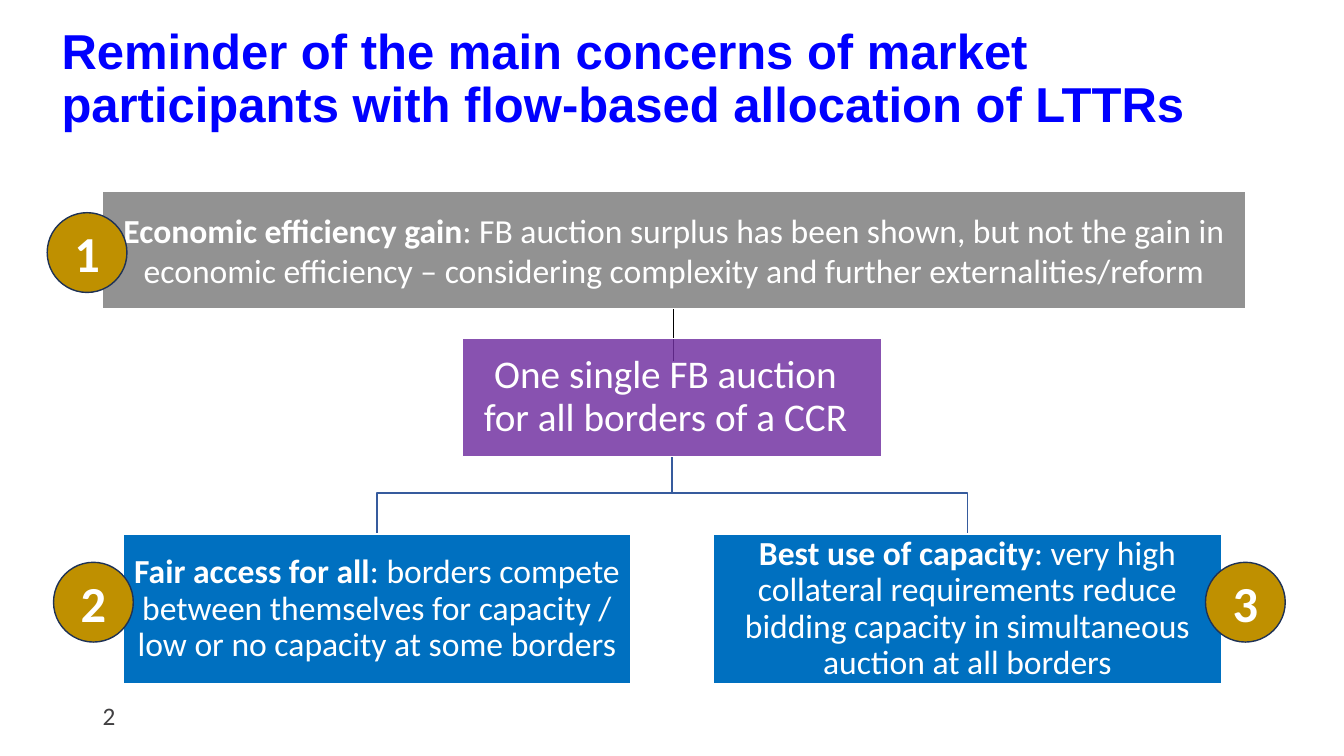
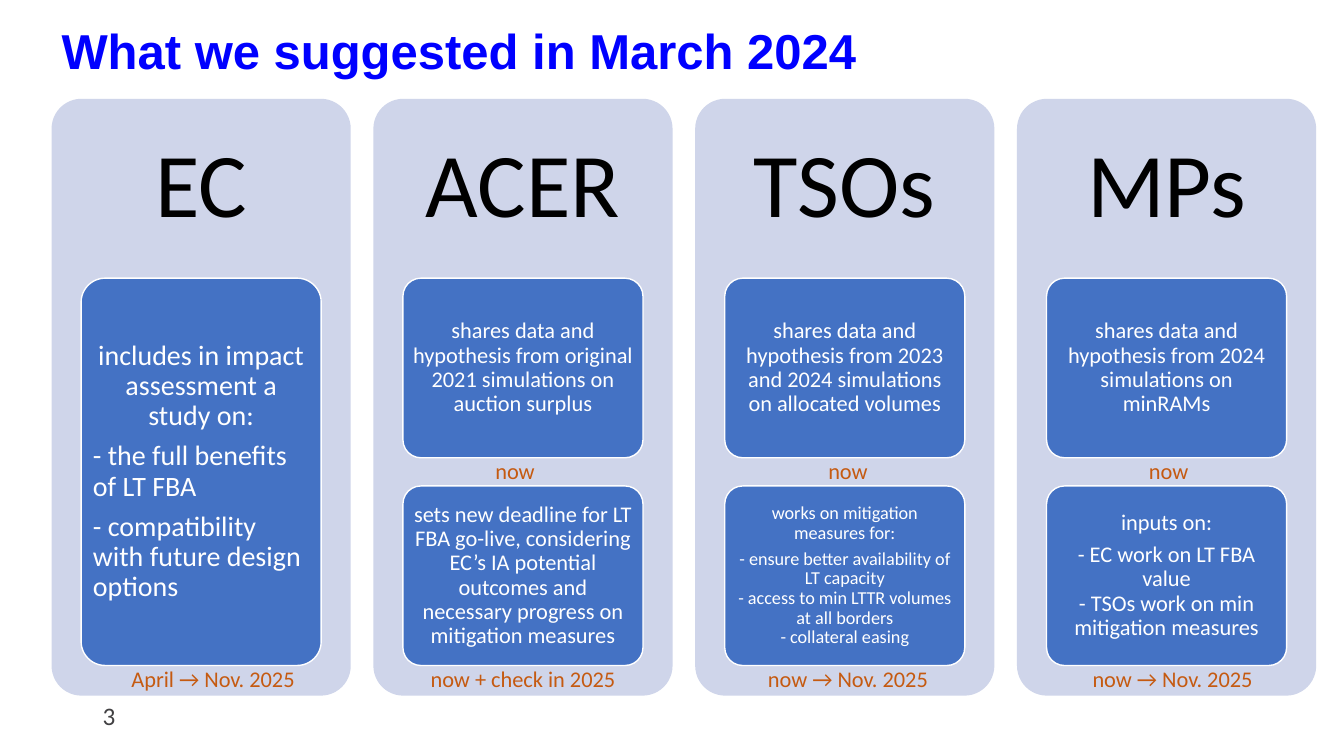
from pptx import Presentation
from pptx import util as u
from pptx.dml.color import RGBColor
from pptx.enum import shapes, text
from pptx.oxml.ns import qn
from lxml import etree

COLORS = {
    "title": "0000FF", "number": "414042", "white": "FFFFFF", "black": "000000",
    "gray": "7C7C7C", "purple": "7030A0", "blue": "0070C0", "gold": "BF9000",
    "badge_edge": "1E3256", "branch": "365B9D", "panel": "CFD5EA",
    "card": "4472C4", "caption": "C55A11",
}
RECTANGLE = shapes.MSO_SHAPE.RECTANGLE
ROUNDED = shapes.MSO_SHAPE.ROUNDED_RECTANGLE
OVAL = shapes.MSO_SHAPE.OVAL
TOP, MIDDLE = text.MSO_ANCHOR.TOP, text.MSO_ANCHOR.MIDDLE
LEFT, CENTER = text.PP_ALIGN.LEFT, text.PP_ALIGN.CENTER


def write(shape, paragraphs, size, color="white", font="Calibri", bold=False,
          align=CENTER, anchor=MIDDLE, margins=(0.25, 0.13, 0.25, 0.13), **spacing):
    """Fill a shape with paragraphs; the part before a "|" is bold."""
    frame = shape.text_frame
    frame.word_wrap = True
    frame.auto_size = text.MSO_AUTO_SIZE.NONE
    frame.vertical_anchor = anchor
    for side, margin in zip(("left", "top", "right", "bottom"), margins):
        setattr(frame, f"margin_{side}", u.Cm(margin))
    for index, content in enumerate(paragraphs):
        paragraph = frame.add_paragraph() if index else frame.paragraphs[0]
        lead, _, rest = content.partition("|")
        paragraph.text = lead
        if rest:
            paragraph.add_run().text = rest
        paragraph.alignment = align
        for name, value in spacing.items():
            setattr(paragraph, name, value)
        for position, run in enumerate(paragraph.runs):
            formats = {"name": font, "size": u.Pt(size),
                       "bold": bold or (bool(rest) and position == 0)}
            for name, value in formats.items():
                setattr(run.font, name, value)
            run.font.color.rgb = RGBColor.from_string(COLORS[color])


def add_box(slide, kind, left, top, width, height, fill, line=None, opacity=None):
    box = slide.shapes.add_shape(kind, *map(u.Cm, (left, top, width, height)))
    box.shadow.inherit = False
    box.fill.solid()
    box.fill.fore_color.rgb = RGBColor.from_string(COLORS[fill])
    if opacity:
        color = box.element.spPr.find(".//" + qn("a:srgbClr"))
        etree.SubElement(color, qn("a:alpha"), val=str(opacity * 1000))
    if line:
        box.line.color.rgb = RGBColor.from_string(COLORS[line])
        box.line.width = u.Pt(1)
    else:
        box.line.fill.background()
    if kind == ROUNDED:
        box.adjustments[0] = 0.1
    return box


presentation = Presentation()
presentation.slide_width, presentation.slide_height = u.Cm(33.87), u.Cm(19.05)
title_only = presentation.slide_layouts[5]

titles = [
    "Reminder of the main concerns of market participants with flow-based allocation of LTTRs",
    "What we suggested in March 2024",
]
slides = []
for number, title in enumerate(titles, start=2):
    slide = presentation.slides.add_slide(title_only)
    heading = slide.shapes.title
    heading.left, heading.top = u.Cm(1.3), u.Cm(0.56)
    heading.width, heading.height = u.Cm(31.27), u.Cm(3.63)
    write(heading, [title], 35, "title", "Arial", bold=True, align=LEFT, anchor=TOP,
          line_spacing=0.9, space_before=u.Pt(10))
    page = slide.shapes.add_textbox(u.Cm(2.34), u.Cm(17.53), u.Cm(7.62), u.Cm(1.02))
    write(page, [str(number)], 18, "number", align=LEFT)
    slides.append(slide)
concerns, suggestions = slides

# Concerns: connecting lines, boxes, numbered badges
stem = concerns.shapes.add_connector(
    shapes.MSO_CONNECTOR.STRAIGHT, u.Cm(16.97), u.Cm(7.77), u.Cm(16.97), u.Cm(9.09))
stem.line.color.rgb = RGBColor.from_string(COLORS["black"])
stem.line.width = u.Pt(1)
etree.SubElement(stem.element.spPr, qn("a:effectLst"))

trunk_x, trunk_top, fork_y, branch_bottom = 16.94, 11.51, 12.42, 13.46
for branch_x in (24.38, 9.5):
    outline = concerns.shapes.build_freeform(u.Cm(trunk_x), u.Cm(trunk_top))
    corners = [(trunk_x, fork_y), (branch_x, fork_y), (branch_x, branch_bottom)]
    outline.add_line_segments([(u.Cm(x), u.Cm(y)) for x, y in corners], close=False)
    branch = outline.convert_to_shape()
    branch.shadow.inherit = False
    branch.fill.background()
    branch.line.color.rgb = RGBColor.from_string(COLORS["branch"])
    branch.line.width = u.Pt(1)

# left, top, width, height, fill, opacity, text size, line spacing, right margin, text
concern_boxes = [
    (11.66, 8.53, 10.57, 2.97, "purple", 83, 28, 0.9, 0.4,
     "One single FB auction\nfor all borders of a CCR"),
    (3.1, 13.46, 12.8, 3.78, "blue", None, 24, 0.9, 0.05,
     "Fair access for all|: borders compete between themselves for capacity / "
     "low or no capacity at some borders"),
    (17.98, 13.46, 12.8, 3.78, "blue", None, 24, 0.9, 0.05,
     "Best use of capacity|: very high collateral requirements reduce bidding "
     "capacity in simultaneous auction at all borders"),
    (2.57, 4.83, 28.83, 2.95, "gray", 83, 24, 1.0, 0.05,
     "Economic efficiency gain|: FB auction surplus has been shown, but not the gain in "
     "economic efficiency – considering complexity and further externalities/reform"),
]
for left, top, width, height, fill, opacity, size, spacing, right, content in concern_boxes:
    box = add_box(concerns, RECTANGLE, left, top, width, height, fill, "white", opacity)
    write(box, [content], size, margins=(0.05, 0.05, right, 0.05), line_spacing=spacing)

badge_corners = [(1.19, 5.36), (1.35, 14.17), (30.38, 14.17)]
for number, (left, top) in enumerate(badge_corners, start=1):
    badge = add_box(concerns, OVAL, left, top, 2.01, 2.01, "gold", "badge_edge")
    write(badge, [str(number)], 36, bold=True)

# Suggestions: one panel per party, each with cards of
# (text size, paragraphs, caption, caption shift from the panel's centre)
parties = {
    "EC": [
        (20, ["includes in impact assessment a study on:", "- the full benefits of LT FBA",
              "- compatibility with future design options"], "April → Nov. 2025", 0.3),
    ],
    "ACER": [
        (16, ["shares data and hypothesis from original 2021 simulations on auction surplus"],
         "now", -0.2),
        (16, ["sets new deadline for LT FBA go-live, considering EC’s IA potential outcomes "
              "and necessary progress on mitigation measures"], "now + check in 2025", 0),
    ],
    "TSOs": [
        (16, ["shares data and hypothesis from 2023 and 2024 simulations on allocated volumes"],
         "now", 0.08),
        (13, ["works on mitigation measures for:",
              "- ensure better availability of LT capacity\n"
              "- access to min LTTR volumes at all borders\n- collateral easing"],
         "now → Nov. 2025", 0.08),
    ],
    "MPs": [
        (16, ["shares data and hypothesis from 2024 simulations on minRAMs"], "now", 0.05),
        (16, ["inputs on:",
              "- EC work on LT FBA value\n- TSOs work on min mitigation measures"],
         "now → Nov. 2025", 0.15),
    ],
}
panel_width, panel_top, panel_pitch = 7.54, 2.49, 8.11
card_width, cards_top, cards_height, card_gap = 6.05, 7.01, 9.76, 0.71
caption_width = 5.94
for column, (party, cards) in enumerate(parties.items()):
    panel_left = 1.3 + column * panel_pitch
    add_box(suggestions, ROUNDED, panel_left, panel_top, panel_width, 15.04, "panel")
    name = suggestions.shapes.add_textbox(
        u.Cm(panel_left), u.Cm(panel_top), u.Cm(panel_width), u.Cm(4.5))
    write(name, [party], 65, "black", margins=(0.69,) * 4, line_spacing=0.9)

    card_height = (cards_height - card_gap * (len(cards) - 1)) / len(cards)
    for row, (size, paragraphs, caption, shift) in enumerate(cards):
        card_top = cards_top + row * (card_height + card_gap)
        card = add_box(suggestions, ROUNDED, panel_left + (panel_width - card_width) / 2,
                       card_top, card_width, card_height, "card", "white")
        write(card, paragraphs, size, margins=(0.12, 0.08, 0.12, 0.08),
              line_spacing=0.9, space_after=u.Pt(round(size * 0.35, 1)))
        if party == "EC":
            for paragraph in card.text_frame.paragraphs[1:]:
                paragraph.alignment = LEFT
        caption_left = panel_left + (panel_width - caption_width) / 2 + shift
        label = suggestions.shapes.add_textbox(
            u.Cm(caption_left), u.Cm(card_top + card_height - 0.15),
            u.Cm(caption_width), u.Cm(0.94))
        write(label, [caption], 16, "caption", anchor=TOP)

presentation.save("out.pptx")
